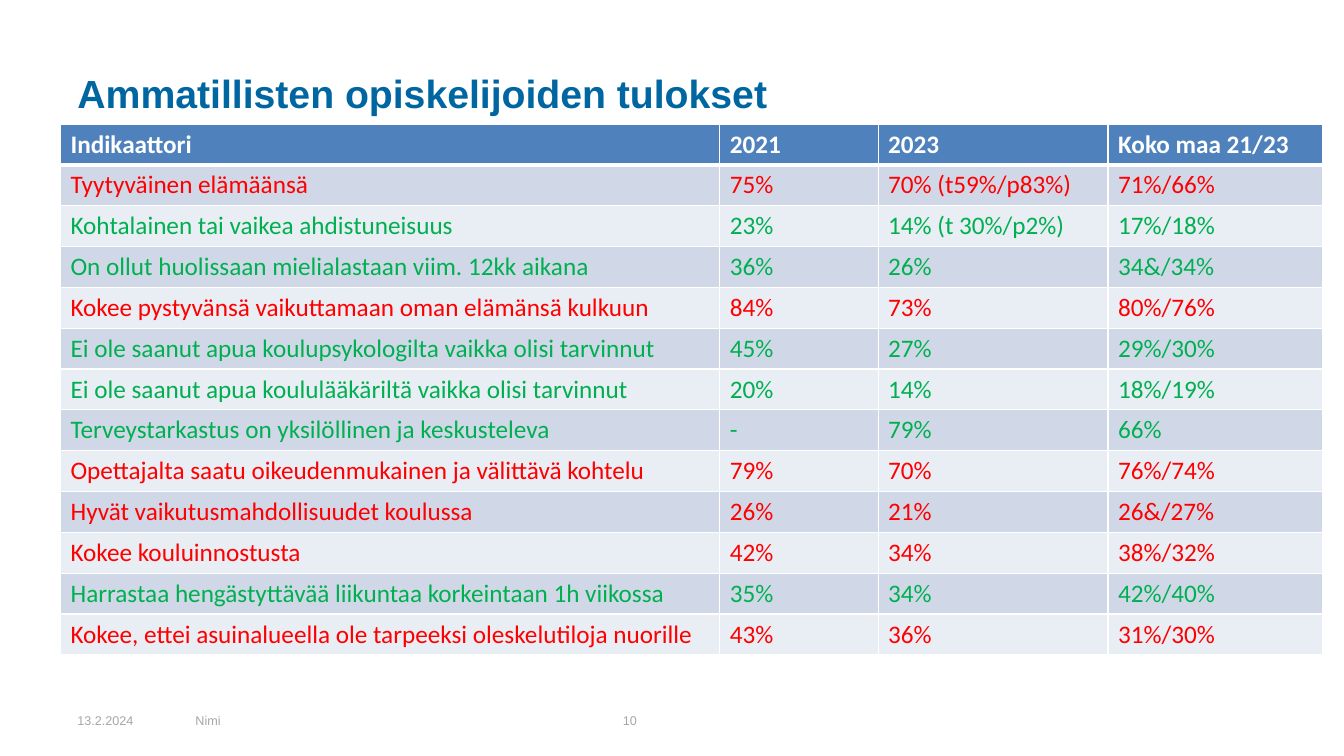
from dataclasses import dataclass

from lxml.etree import SubElement
from pptx import Presentation
from pptx.dml.color import RGBColor
from pptx.enum.text import MSO_ANCHOR
from pptx.oxml.ns import qn
from pptx.util import Inches, Pt


@dataclass(frozen=True)
class Theme:
    heading_font: str = "Arial"
    table_font: str = "Calibri"
    title_size: int = 28
    table_size: int = 18
    footer_size: int = 9
    title: str = "0066A1"
    footer: str = "A6A6A6"
    white: str = "FFFFFF"
    header_fill: str = "4F81BD"
    bands: tuple = ("D0D8E8", "E9EDF4")
    worse: str = "FF0000"
    better: str = "00B050"


THEME = Theme()
WORSE, BETTER = THEME.worse, THEME.better

HEADINGS = ("Indikaattori", "2021", "2023", "Koko maa 21/23")
COLUMN_WIDTHS = (6.54, 1.57, 2.28, 2.13)
RESULTS = (
    (WORSE, "Tyytyväinen elämäänsä", "75%", "70% (t59%/p83%)", "71%/66%"),
    (BETTER, "Kohtalainen tai vaikea ahdistuneisuus", "23%", "14% (t 30%/p2%)", "17%/18%"),
    (BETTER, "On ollut huolissaan mielialastaan viim. 12kk aikana", "36%", "26%", "34&/34%"),
    (WORSE, "Kokee pystyvänsä vaikuttamaan oman elämänsä kulkuun", "84%", "73%", "80%/76%"),
    (BETTER, "Ei ole saanut apua koulupsykologilta vaikka olisi tarvinnut", "45%", "27%", "29%/30%"),
    (BETTER, "Ei ole saanut apua koululääkäriltä vaikka olisi tarvinnut", "20%", "14%", "18%/19%"),
    (BETTER, "Terveystarkastus on yksilöllinen ja keskusteleva", "-", "79%", "66%"),
    (WORSE, "Opettajalta saatu oikeudenmukainen ja välittävä kohtelu", "79%", "70%", "76%/74%"),
    (WORSE, "Hyvät vaikutusmahdollisuudet koulussa", "26%", "21%", "26&/27%"),
    (WORSE, "Kokee kouluinnostusta", "42%", "34%", "38%/32%"),
    (BETTER, "Harrastaa hengästyttävää liikuntaa korkeintaan 1h viikossa", "35%", "34%", "42%/40%"),
    (WORSE, "Kokee, ettei asuinalueella ole tarpeeksi oleskelutiloja nuorille", "43%", "36%", "31%/30%"),
)
FOOTER = (("13.2.2024", 1.17), ("Nimi", 4.24), ("10", 3.11))


def write(frame, text, *, font, size, color, bold=False):
    run = frame.paragraphs[0].add_run()
    run.text = text
    run.font.name = font
    run.font.size = Pt(size)
    run.font.bold = bold
    run.font.color.rgb = RGBColor.from_string(color)


def add_label(slide, box, text, **text_format):
    frame = slide.shapes.add_textbox(*map(Inches, box)).text_frame
    frame.word_wrap = True
    frame.vertical_anchor = MSO_ANCHOR.MIDDLE
    write(frame, text, **text_format)


def set_borders(cell, **points):
    """Draw white borders; keywords are sides L, R, T and B with widths in points."""
    properties = cell._tc.get_or_add_tcPr()
    for side, width in points.items():
        line = SubElement(properties, qn(f"a:ln{side}"), w=str(Pt(width)))
        fill = SubElement(line, qn("a:solidFill"))
        SubElement(fill, qn("a:srgbClr"), val=THEME.white)


def fill_row(table, row, texts, fill, color, top=1, bottom=1, bold=False):
    for column, text in enumerate(texts):
        cell = table.cell(row, column)
        set_borders(cell, L=1, R=1, T=top, B=bottom)
        cell.fill.solid()
        cell.fill.fore_color.rgb = RGBColor.from_string(fill)
        write(cell.text_frame, text, font=THEME.table_font,
              size=THEME.table_size, color=color, bold=bold)


def add_results_table(slide, box):
    row_count = len(RESULTS) + 1
    table = slide.shapes.add_table(
        row_count, len(HEADINGS), *map(Inches, box)).table
    for column, width in zip(table.columns, COLUMN_WIDTHS):
        column.width = Inches(width)
    for row in table.rows:
        row.height = Inches(box[3] / row_count)

    fill_row(table, 0, HEADINGS, THEME.header_fill, THEME.white, bottom=3, bold=True)
    for index, (color, *texts) in enumerate(RESULTS):
        fill_row(table, index + 1, texts, THEME.bands[index % 2], color,
                 top=1 if index else 3)


def add_footer(slide, box):
    left, top, _, height = box
    for text, width in FOOTER:
        add_label(slide, (left, top, width, height), text, font=THEME.heading_font,
                  size=THEME.footer_size, color=THEME.footer)
        left += width


def main():
    deck = Presentation()
    deck.slide_width, deck.slide_height = Inches(13.33), Inches(7.5)
    slide = deck.slides.add_slide(deck.slide_layouts[6])
    add_label(slide, (0.67, 0.3, 12, 1.25), "Ammatillisten opiskelijoiden tulokset",
              font=THEME.heading_font, size=THEME.title_size,
              color=THEME.title, bold=True)
    add_results_table(slide, (0.6, 1.23, sum(COLUMN_WIDTHS), 5.27))
    add_footer(slide, (0.67, 6.95, 8.52, 0.4))
    deck.save("out.pptx")


if __name__ == "__main__":
    main()
